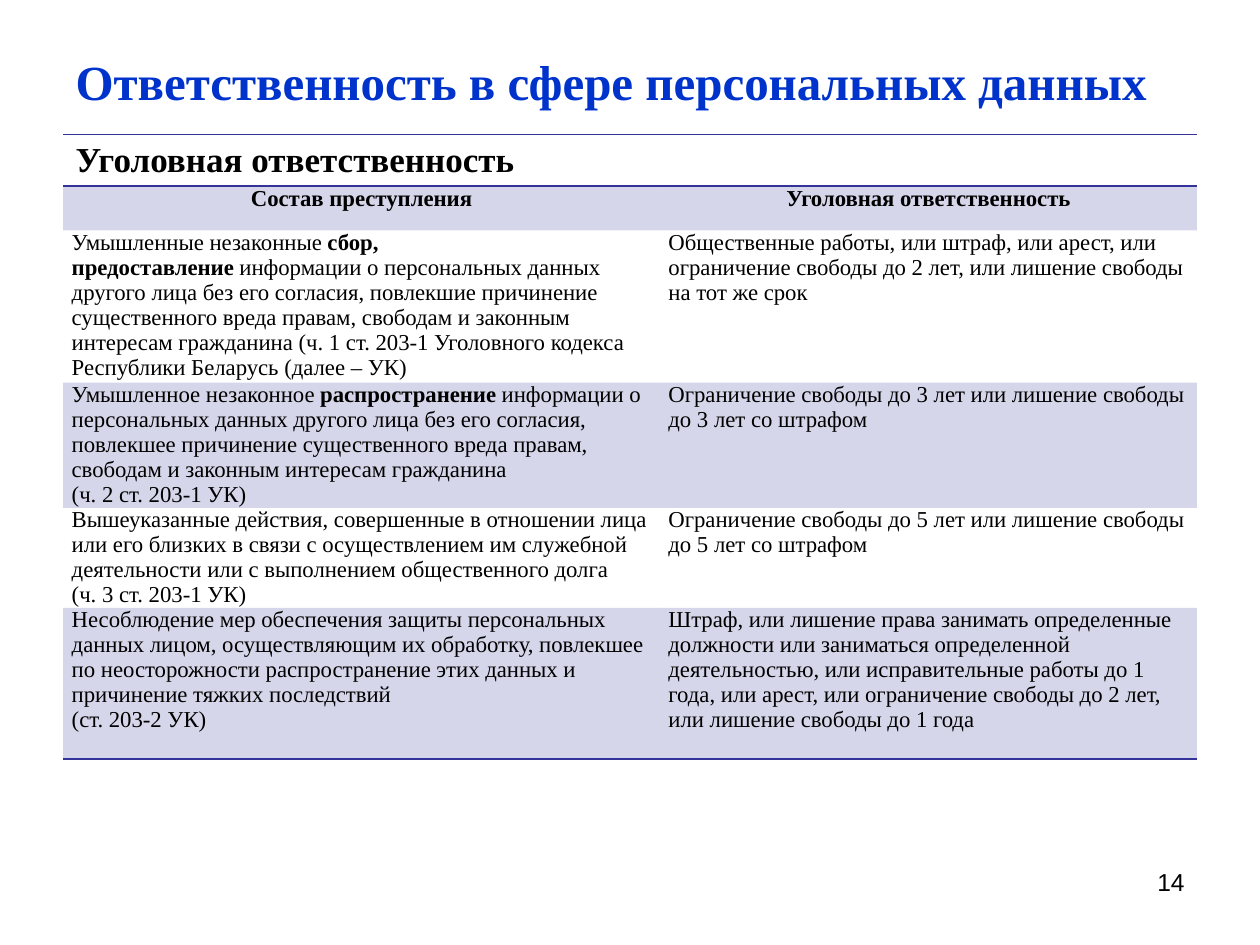
from lxml import etree
from pptx import Presentation
from pptx.dml.color import RGBColor
from pptx.enum.text import MSO_ANCHOR, PP_ALIGN
from pptx.oxml.ns import qn
from pptx.util import Pt

LEFT, CENTER, RIGHT = PP_ALIGN.LEFT, PP_ALIGN.CENTER, PP_ALIGN.RIGHT
TOP, MIDDLE = MSO_ANCHOR.TOP, MSO_ANCHOR.MIDDLE
PLAIN = "{2D5ABB26-0587-4C30-8999-92F81FD0307C}"  # table style without lines
NB = chr(160)  # no-break space


def color(text):
    return RGBColor.from_string(text)


class Deck:
    serif, sans = "Times New Roman", "Arial"
    ink, blue, navy = "000000", "0033CC", "333399"

    def __init__(self):
        self.prs = Presentation()
        self.prs.slide_width, self.prs.slide_height = Pt(720), Pt(540)
        self.slide = self.prs.slides.add_slide(self.prs.slide_layouts[5])

    def text(self, frame, pars, size, align=LEFT, font=serif, ink=ink):
        """Each paragraph is a list of (words, bold) runs."""
        frame.word_wrap = True
        for i, runs in enumerate(pars):
            par = frame.add_paragraph() if i else frame.paragraphs[0]
            par.alignment = align
            for words, bold in runs:
                run = par.add_run()
                run.text = words
                run.font.size, run.font.name = Pt(size), font
                run.font.bold = bold
                run.font.color.rgb = color(ink)

    def title(self, words, x, y, w, h):
        box = self.slide.shapes.title
        box.left, box.top, box.width, box.height = Pt(x), Pt(y), Pt(w), Pt(h)
        box.text_frame.vertical_anchor = MIDDLE
        self.text(box.text_frame, [[(words, True)]], 28, ink=self.blue)

    def label(self, words, x, y, w, h):
        box = self.slide.shapes.add_textbox(Pt(x), Pt(y), Pt(w), Pt(h))
        box.text_frame.vertical_anchor = TOP
        self.text(box.text_frame, [[(words, False)]], 14, RIGHT, self.sans)

    def table(self, x, y, cols, rows, height):
        frame = self.slide.shapes.add_table(
            len(rows), len(cols), Pt(x), Pt(y), Pt(sum(cols)), Pt(height))
        grid = frame.table
        grid.first_row = grid.horz_banding = False
        frame._element.find(".//" + qn("a:tableStyleId")).text = PLAIN
        for col, size in zip(grid.columns, cols):
            col.width = Pt(size)
        for row, size in zip(grid.rows, rows):
            row.height = Pt(size)
        frame.height = Pt(height)
        return grid

    def cell(self, cell, pars, align, shade):
        cell.margin_left = cell.margin_right = Pt(5)
        cell.margin_top = cell.margin_bottom = 0
        self.text(cell.text_frame, pars, 13, align)
        if shade:
            cell.fill.solid()
            cell.fill.fore_color.rgb = color(self.navy)
            tint = cell._tc.tcPr.find(".//" + qn("a:srgbClr"))
            etree.SubElement(tint, qn("a:alpha"), val="20000")
        else:
            cell.fill.background()

    def border(self, cell, *sides):
        props = cell._tc.get_or_add_tcPr()
        for i, side in enumerate(sides):
            line = etree.Element(qn("a:ln" + side), w=str(Pt(1)))
            fill = etree.SubElement(line, qn("a:solidFill"))
            etree.SubElement(fill, qn("a:srgbClr"), val=self.navy)
            props.insert(i, line)


HEADS = ["Состав преступления", "Уголовная ответственность"]
BODY = [
    ([[(f"Умышленные незаконные{NB}", False),
       ("сбор, предоставление", True),
       (f"{NB}информации о персональных данных другого лица без его согласия, "
        "повлекшие причинение существенного вреда правам, свободам и законным "
        f"интересам гражданина (ч. 1 ст. 203-1{NB}Уголовного кодекса "
        "Республики Беларусь (далее – УК)", False)]],
     "Общественные работы, или штраф, или арест, или ограничение свободы "
     "до 2 лет, или лишение свободы на тот же срок"),
    ([[("Умышленное незаконное ", False),
       ("распространение", True),
       (" информации о персональных данных другого лица без его согласия, "
        "повлекшее причинение существенного вреда правам, свободам и законным "
        "интересам гражданина", False)],
      [(f"(ч. 2 ст. 203-1{NB}УК)", False)]],
     "Ограничение свободы до 3 лет или лишение свободы до 3 лет со штрафом"),
    ([[("Вышеуказанные действия, совершенные в отношении лица или его близких "
        "в связи с осуществлением им служебной деятельности или с выполнением "
        "общественного долга", False)],
      [(f"(ч. 3 ст. 203-1{NB}УК)", False)]],
     "Ограничение свободы до 5 лет или лишение свободы до 5 лет со штрафом"),
    ([[("Несоблюдение мер обеспечения защиты персональных данных лицом, "
        "осуществляющим их обработку, повлекшее по неосторожности "
        "распространение этих данных и причинение тяжких последствий", False)],
      [(f"(ст. 203-2{NB}УК)", False)]],
     "Штраф, или лишение права занимать определенные должности или заниматься "
     "определенной деятельностью, или исправительные работы до 1 года, или "
     "арест, или ограничение свободы до 2 лет, или лишение свободы до 1 года"),
]


def main():
    deck = Deck()
    deck.title("Ответственность в сфере персональных данных",
               36, 21.6, 648, 49.7)

    # Table with a merged heading row
    grid = deck.table(36, 77, [341, 307], [28, 25.2, 87.1, 51.8, 34.6, 86.4],
                      377)
    grid.cell(0, 0).merge(grid.cell(0, 1))
    deck.text(grid.cell(0, 0).text_frame,
              [[("Уголовная ответственность", True)]], 20)
    grid.cell(0, 0).fill.background()

    # Column heads, then the body with every second row shaded
    for col, head in enumerate(HEADS):
        deck.cell(grid.cell(1, col), [[(head, True)]], CENTER, True)
    for row, (crime, term) in enumerate(BODY, 2):
        for col, pars in enumerate((crime, [[(term, False)]])):
            deck.cell(grid.cell(row, col), pars, LEFT, row % 2)

    # Rules above and below the heading and under the table
    for col in range(2):
        deck.border(grid.cell(0, col), "T", "B")
        deck.border(grid.cell(5, col), "B")

    # Page number
    deck.label("14", 516, 492, 168, 37.5)
    deck.prs.save("out.pptx")


if __name__ == "__main__":
    main()
